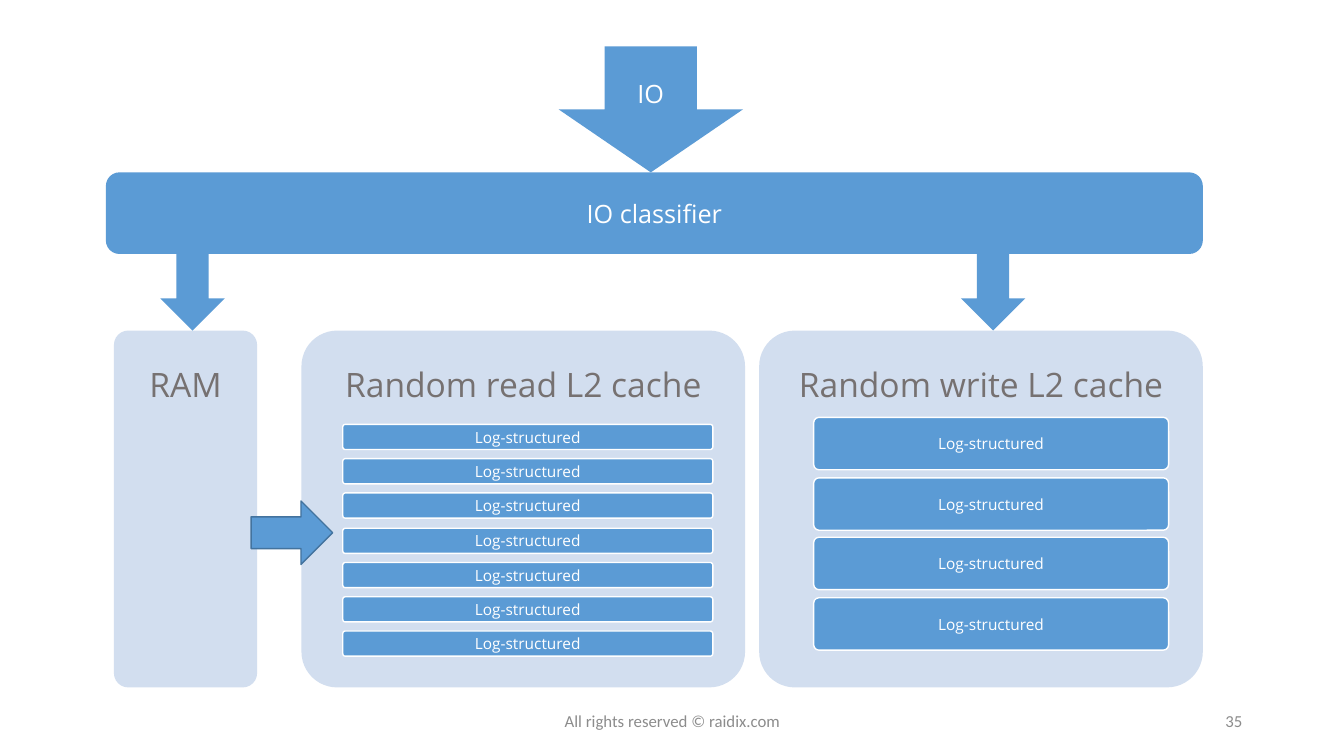
from pptx import Presentation
from pptx.dml.color import RGBColor
from pptx.enum.shapes import MSO_SHAPE
from pptx.enum.text import MSO_ANCHOR, PP_ALIGN
from pptx.util import Pt

PX = 9144
ROUNDED = MSO_SHAPE.ROUNDED_RECTANGLE
DOWN_ARROW = MSO_SHAPE.DOWN_ARROW
MIDDLE = MSO_ANCHOR.MIDDLE
CENTER, RIGHT = PP_ALIGN.CENTER, PP_ALIGN.RIGHT
COLORS = {
    "blue": "5B9BD5",
    "outline": "43739E",
    "panel": "D2DEEF",
    "heading": "767171",
    "footer": "8C8C8C",
    "white": "FFFFFF",
}


def color(name):
    """Return the named palette colour."""
    return RGBColor.from_string(COLORS[name])


def emu(box):
    """Turn a box in px into EMU."""
    return [length * PX for length in box]


def write(shape, text, size, ink, font="Open Sans", align=CENTER, inset=(10, 5)):
    """Set and format one line of text in a shape."""
    frame = shape.text_frame
    frame.word_wrap = True
    frame.vertical_anchor = MIDDLE
    frame.margin_left = frame.margin_right = inset[0] * PX
    frame.margin_top = frame.margin_bottom = inset[1] * PX
    frame.text = text
    paragraph = frame.paragraphs[0]
    paragraph.alignment = align
    paragraph.font.size = Pt(size)
    paragraph.font.name = font
    paragraph.font.color.rgb = color(ink)


def add_block(slide, preset, box, fill="blue", line=None):
    """Draw a flat preset shape with an optional outline."""
    block = slide.shapes.add_shape(preset, *emu(box))
    block.shadow.inherit = False
    block.fill.solid()
    block.fill.fore_color.rgb = color(fill)
    if line:
        block.line.color.rgb = color(line)
        block.line.width = Pt(1)
    else:
        block.line.fill.background()
    return block


def add_label(slide, box, *text_format, **options):
    """Place a text box."""
    write(slide.shapes.add_textbox(*emu(box)), *text_format, **options)


def add_panel(slide, box, heading):
    """Draw a storage panel with its heading at the top."""
    left, top, width, _ = box
    panel = add_block(slide, ROUNDED, box, "panel")
    panel.adjustments[0] = 0.1
    add_label(slide, (left, top, width, 106), heading, 24, "heading")


def add_cache(slide, box, heading, count, bar_box, last_offset):
    """Draw a cache panel with evenly spaced log bars."""
    add_panel(slide, box, heading)
    left, top, _, _ = box
    bar_left, first_offset, bar_width, bar_height = bar_box
    pitch = (last_offset - first_offset) / (count - 1)
    for index in range(count):
        bar_top = top + round(first_offset + index * pitch)
        bar = add_block(slide, ROUNDED,
                        (left + bar_left, bar_top, bar_width, bar_height), line="white")
        bar.adjustments[0] = 0.1
        write(bar, "Log-structured", 11, "white", inset=(3, 2))


def add_classifier(slide, box):
    """Draw the classifier with the arrows into and out of it."""
    left, top, width, height = box
    classifier = add_block(slide, ROUNDED, box)
    write(classifier, "IO classifier", 18, "white")
    io_arrow = add_block(slide, DOWN_ARROW, (left + 449, top - 125, 183, 125))
    write(io_arrow, "IO", 18, "white")
    for offset in (54, 848):
        add_block(slide, DOWN_ARROW, (left + offset, top + height, 64, 76))


def add_read_arrow(slide, box):
    """Draw the arrow from RAM to the read cache."""
    arrow = add_block(slide, DOWN_ARROW, box, line="outline")
    arrow.rotation = 270


def add_footer(slide, box):
    """Place the copyright line and the slide number."""
    left, top, width, height = box
    add_label(slide, (left, top, 450, height), "All rights reserved © raidix.com",
              12, "footer", font="Calibri")
    add_label(slide, (left + width - 300, top, 300, height), "35",
              12, "footer", font="Calibri", align=RIGHT)


def main():
    """Build the slide and save it."""
    deck = Presentation()
    deck.slide_width, deck.slide_height = emu((1333, 750))
    slide = deck.slides.add_slide(deck.slide_layouts[6])
    add_panel(slide, (113, 328, 142, 354), "RAM")
    add_cache(slide, (299, 328, 440, 354), "Random read L2 cache",
              7, (41, 93, 367, 25), 298)
    add_cache(slide, (753, 328, 440, 354), "Random write L2 cache",
              4, (54, 86, 352, 52), 265)
    add_classifier(slide, (105, 171, 1088, 81))
    add_read_arrow(slide, (258, 488, 63, 81))
    add_footer(slide, (442, 695, 800, 40))
    deck.save("out.pptx")


if __name__ == "__main__":
    main()
